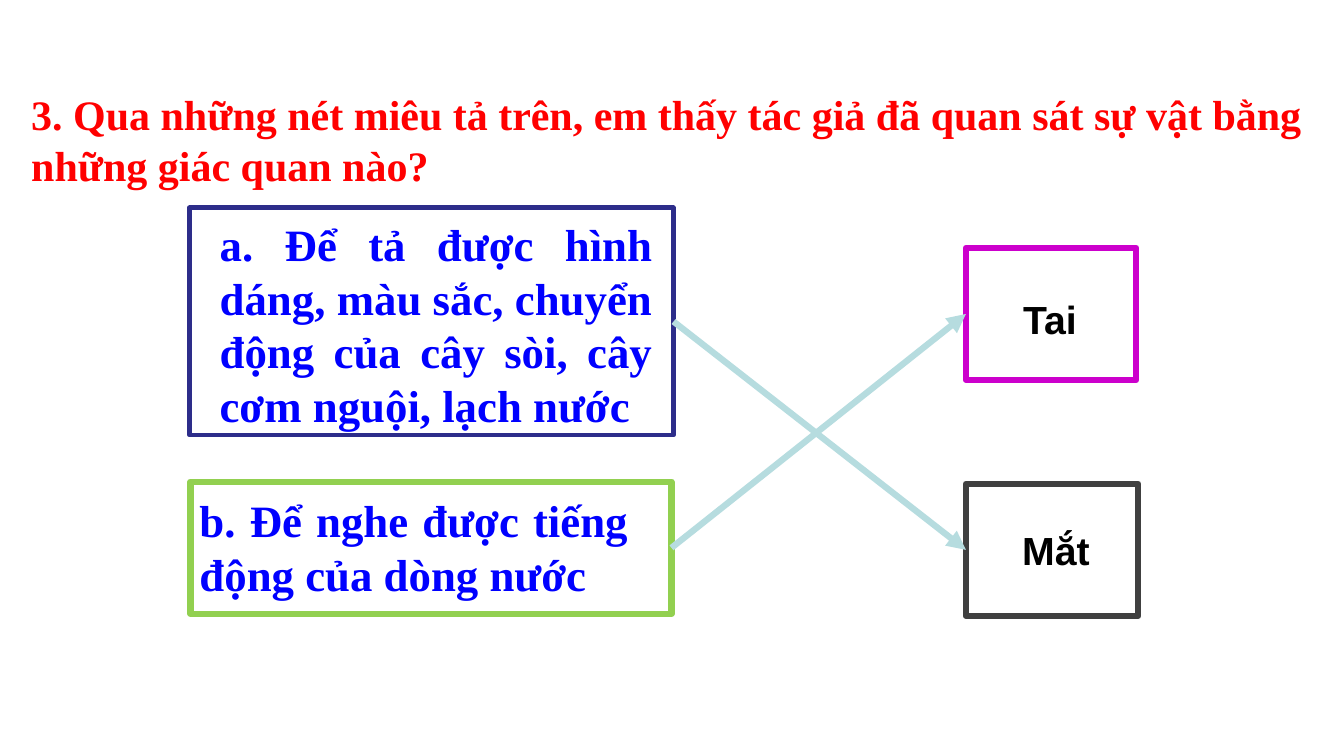
from lxml.etree import SubElement
from pptx import Presentation
from pptx.dml.color import RGBColor
from pptx.enum.shapes import MSO_CONNECTOR, MSO_SHAPE
from pptx.enum.text import MSO_ANCHOR, MSO_AUTO_SIZE, PP_ALIGN
from pptx.oxml.ns import qn
from pptx.util import Inches, Pt

COLOURS = {
    "question": "FF0000",
    "answer": "0000FF",
    "sense": "000000",
    "navy": "2D2D8A",
    "green": "92D050",
    "magenta": "CC00CC",
    "grey": "404040",
    "arrow": "B6DCDF",
}
LEFT, RIGHT = 1, 3


class MatchingSlide:
    serif = "Times New Roman"
    sans = "Arial"
    thick = 4.5

    def __init__(self, deck):
        self.slide = deck.slides.add_slide(deck.slide_layouts[5])
        self.shapes = self.slide.shapes

    def colour(self, name):
        return RGBColor.from_string(COLOURS[name])

    def add_text(self, box, text, size, font, colour, align, wrap=True):
        frame = box.text_frame
        frame.word_wrap = wrap
        frame.auto_size = MSO_AUTO_SIZE.SHAPE_TO_FIT_TEXT
        frame.vertical_anchor = MSO_ANCHOR.TOP
        para = frame.paragraphs[0]
        para.alignment = align
        span = para.add_run()
        span.text = text
        span.font.size = Pt(size)
        span.font.name = font
        span.font.bold = True
        span.font.color.rgb = self.colour(colour)

    def title(self, text, left, top, width, height):
        box = self.shapes.title
        box.left, box.top = Inches(left), Inches(top)
        box.width, box.height = Inches(width), Inches(height)
        self.add_text(box, text, 30, self.serif, "question", PP_ALIGN.LEFT)

    def text_box(self, left, top, width, height):
        return self.shapes.add_textbox(
            Inches(left), Inches(top), Inches(width), Inches(height))

    def answer(self, text, *place):
        self.add_text(self.text_box(*place), text, 32, self.serif, "answer", PP_ALIGN.JUSTIFY)

    def sense(self, text, *place):
        self.add_text(self.text_box(*place), text, 28, self.sans, "sense", PP_ALIGN.LEFT, False)

    def frame(self, colour, left, top, width, height, weight=thick):
        shape = self.shapes.add_shape(
            MSO_SHAPE.RECTANGLE, Inches(left), Inches(top), Inches(width), Inches(height))
        shape.shadow.inherit = False
        shape.fill.background()
        shape.line.color.rgb = self.colour(colour)
        shape.line.width = Pt(weight)
        return shape

    def arrow(self, start, end):
        connector = self.shapes.add_connector(MSO_CONNECTOR.STRAIGHT, 0, 0, 0, 0)
        connector.begin_connect(start, RIGHT)
        connector.end_connect(end, LEFT)
        connector.line.color.rgb = self.colour("arrow")
        connector.line.width = Pt(self.thick)
        properties = connector.element.find(qn("p:spPr"))
        SubElement(properties.find(qn("a:ln")), qn("a:tailEnd"), type="triangle")
        SubElement(properties, qn("a:effectLst"))


def main():
    deck = Presentation()
    deck.slide_width, deck.slide_height = Inches(13.33), Inches(7.5)
    page = MatchingSlide(deck)

    page.title("3. Qua những nét miêu tả trên, em thấy tác giả đã quan sát sự vật "
               "bằng những giác quan nào?", 0.21, 0.83, 12.91, 1.11)

    page.answer("a. Để tả được hình dáng, màu sắc, chuyển động của cây sòi, "
                "cây cơm nguội, lạch nước", 2.08, 2.1, 4.49, 2.26)
    shape_answer = page.frame("navy", 1.88, 2.06, 4.8, 2.26, 3)
    page.answer("b. Để nghe được tiếng động của dòng nước", 1.88, 4.84, 4.45, 1.18)
    sound_answer = page.frame("green", 1.89, 4.78, 4.77, 1.31)

    ear = page.frame("magenta", 9.58, 2.46, 1.69, 1.31)
    eye = page.frame("grey", 9.58, 4.8, 1.71, 1.31)
    page.sense("Tai", 10.05, 2.88, 0.74, 0.57)
    page.sense("Mắt", 10.04, 5.17, 0.88, 0.57)

    page.arrow(shape_answer, eye)
    page.arrow(sound_answer, ear)

    deck.save("out.pptx")


if __name__ == "__main__":
    main()
